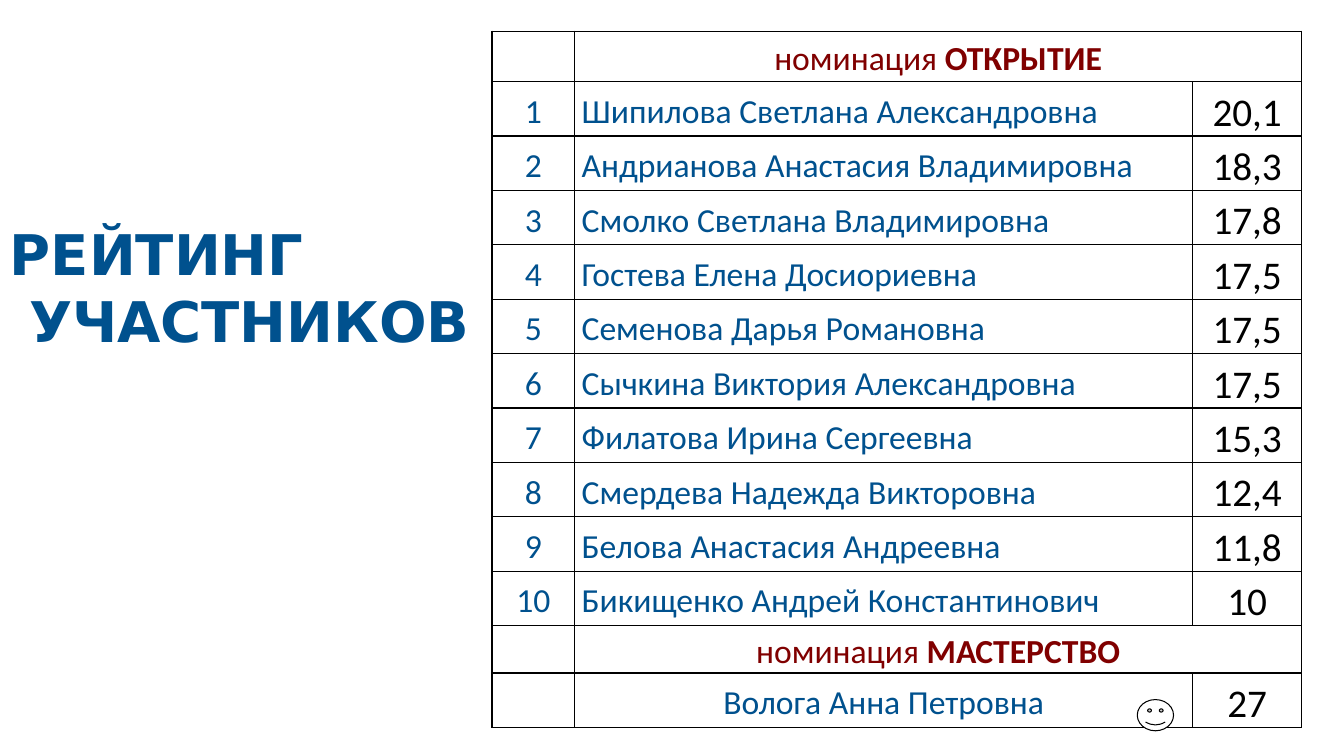
from pptx import Presentation
from pptx.dml.color import RGBColor
from pptx.enum.shapes import MSO_SHAPE
from pptx.enum.text import MSO_ANCHOR, PP_ALIGN
from pptx.oxml import parse_xml
from pptx.oxml.ns import nsdecls
from pptx.util import Inches, Pt

TITLE = "РЕЙТИНГ\vУЧАСТНИКОВ"
GROUP = "номинация "
FIRST, SECOND = "ОТКРЫТИЕ", "МАСТЕРСТВО"
RATING = [
    ("Шипилова Светлана Александровна", "20,1"),
    ("Андрианова Анастасия Владимировна", "18,3"),
    ("Смолко Светлана Владимировна", "17,8"),
    ("Гостева Елена Досиориевна", "17,5"),
    ("Семенова Дарья Романовна", "17,5"),
    ("Сычкина Виктория Александровна", "17,5"),
    ("Филатова Ирина Сергеевна", "15,3"),
    ("Смердева Надежда Викторовна", "12,4"),
    ("Белова Анастасия Андреевна", "11,8"),
    ("Бикищенко Андрей Константинович", "10"),
]
MASTER = ("Волога Анна Петровна", "27")

BLUE = RGBColor(0x00, 0x51, 0x8E)
RED = RGBColor(0x80, 0x00, 0x00)
BLACK = RGBColor(0, 0, 0)
WHITE = RGBColor(255, 255, 255)
LEFT, CENTER = PP_ALIGN.LEFT, PP_ALIGN.CENTER

COLS = (0.82, 6.13, 1.08)
HEAD, LINE, BREAK = 0.5, 0.54, 0.47
ROWS = [HEAD] + [LINE] * len(RATING) + [BREAK, LINE]


def write(frame, text, strong="", size=24, color=BLUE, font="Calibri",
          bold=False, align=CENTER, space=1.15):
    par = frame.paragraphs[0]
    par.alignment = align
    par.line_spacing = space
    par.font.size = Pt(size)
    for part, heavy in ((text, bold), (strong, True)):
        if not part:
            continue
        for i, piece in enumerate(part.split("\v")):
            if i:
                par.add_line_break()
            run = par.add_run()
            run.text = piece
            run.font.size = Pt(size)
            run.font.name = font
            run.font.bold = heavy
            run.font.color.rgb = color
    return par


def border(cell):
    cell.fill.background()
    props = cell._tc.get_or_add_tcPr()
    for i, side in enumerate("LRTB"):
        props.insert(i, parse_xml(
            f'<a:ln{side} {nsdecls("a")} w="{Pt(1)}"><a:solidFill>'
            f'<a:srgbClr val="{BLACK}"/></a:solidFill></a:ln{side}>'))


def fill_row(table, row, number, name, score, align=LEFT):
    if number:
        write(table.cell(row, 0).text_frame, number)
    write(table.cell(row, 1).text_frame, name, align=align)
    write(table.cell(row, 2).text_frame, score, size=28, color=BLACK)


def add_title(slide):
    box = slide.shapes.add_textbox(0, Inches(2.44), Inches(4.94), Inches(0.81))
    frame = box.text_frame
    frame.word_wrap = True
    frame.vertical_anchor = MSO_ANCHOR.MIDDLE
    par = write(frame, TITLE, size=40, font="DejaVu Sans", bold=True,
                align=LEFT, space=1.0)
    props = par._p.get_or_add_pPr()
    props.set("marL", str(Inches(0.19)))
    props.set("indent", str(-Inches(0.19)))


def add_rating(slide):
    table = slide.shapes.add_table(
        len(ROWS), len(COLS), Inches(4.88), Inches(0.31),
        Inches(sum(COLS)), Inches(sum(ROWS))).table
    table.first_row = table.horz_banding = False
    for col, width in zip(table.columns, COLS):
        col.width = Inches(width)
    for row, height in zip(table.rows, ROWS):
        row.height = Inches(height)
    for cell in table.iter_cells():
        border(cell)
        cell.vertical_anchor = MSO_ANCHOR.MIDDLE
        cell.margin_left = cell.margin_right = Inches(0.07)
        cell.margin_top = cell.margin_bottom = 0
    last = len(ROWS) - 1
    for row, name in ((0, FIRST), (last - 1, SECOND)):
        cell = table.cell(row, 1)
        cell.merge(table.cell(row, 2))
        write(cell.text_frame, GROUP, strong=name, color=RED)
    for row, (name, score) in enumerate(RATING, 1):
        fill_row(table, row, str(row), name, score)
    fill_row(table, last, "", *MASTER, align=CENTER)


def add_smile(slide):
    smile = slide.shapes.add_shape(
        MSO_SHAPE.SMILEY_FACE, Inches(11.28), Inches(6.94),
        Inches(0.36), Inches(0.31))
    smile.shadow.inherit = False
    smile.fill.solid()
    smile.fill.fore_color.rgb = WHITE
    smile.line.color.rgb = BLACK
    smile.line.width = Pt(0.75)


def main():
    deck = Presentation()
    deck.slide_width, deck.slide_height = Inches(13.33), Inches(7.5)
    slide = deck.slides.add_slide(deck.slide_layouts[6])
    add_title(slide)
    add_rating(slide)
    add_smile(slide)
    deck.save("out.pptx")


if __name__ == "__main__":
    main()
